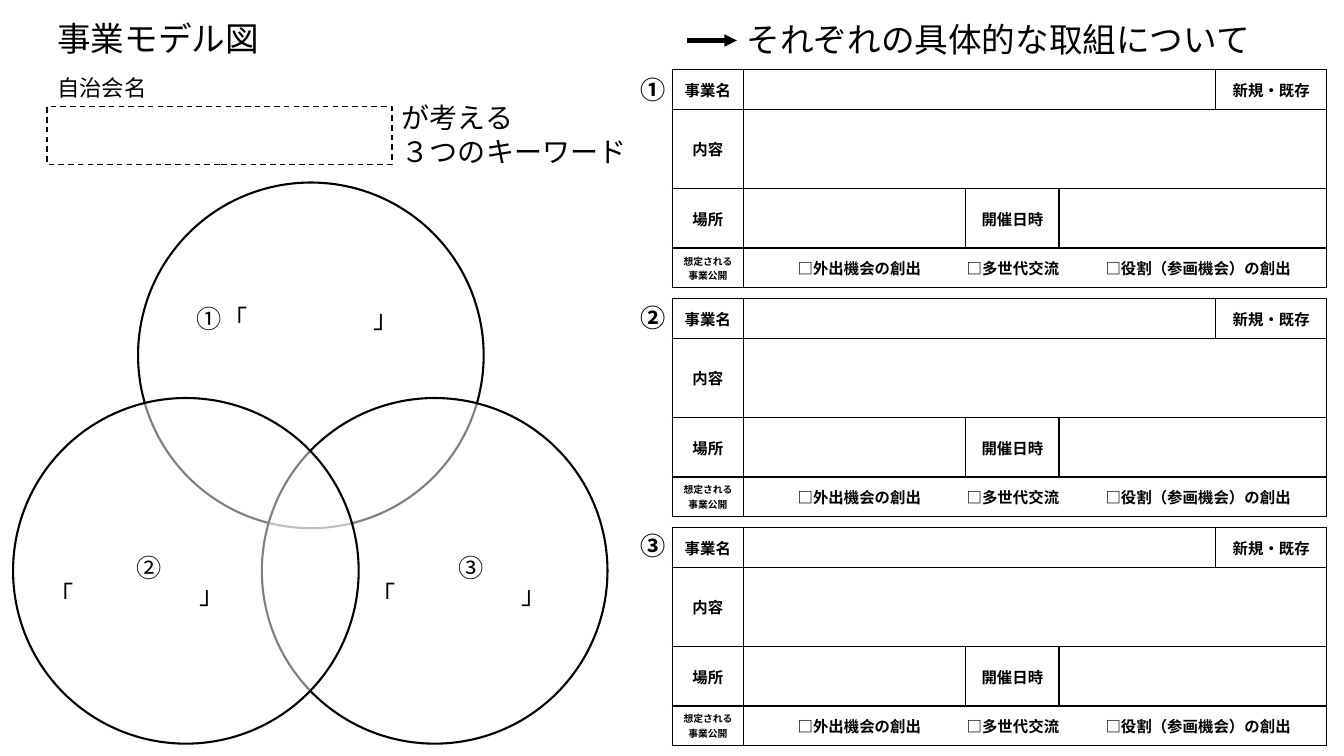
from pptx import Presentation
from pptx import util as u
from pptx.dml.color import RGBColor
from pptx.enum import dml, shapes, text
from pptx.oxml import parse_xml
from pptx.oxml.ns import nsdecls, qn

Cm = u.Cm
NOTO = "Noto Sans CJK JP"
INK, PAPER = "000000", "FFFFFF"
MID, TOP = text.MSO_ANCHOR.MIDDLE, text.MSO_ANCHOR.TOP
LEFT, MIDDLE = text.PP_ALIGN.LEFT, text.PP_ALIGN.CENTER


def color(code):
    return RGBColor.from_string(code)


def write(frame, words, size, name=NOTO, bold=False, align=LEFT):
    """Fill a text frame, one paragraph for each line of words."""
    frame.text = words
    for para in frame.paragraphs:
        para.alignment = align
        for run in para.runs:
            style = {"size": u.Pt(size), "name": name, "bold": bold}
            for key, value in style.items():
                setattr(run.font, key, value)
            run.font.color.rgb = color(INK)
            run.font._element.append(
                parse_xml(f'<a:ea {nsdecls("a")} typeface="{NOTO}"/>'))


prs = Presentation()
prs.slide_width, prs.slide_height = Cm(33.87), Cm(19.05)
slide = prs.slides.add_slide(prs.slide_layouts[5])
items = slide.shapes

# Title
title = items.title
place = {"left": Cm(1.19), "top": Cm(0.33), "width": Cm(5.64), "height": Cm(1.27)}
for key, value in place.items():
    setattr(title, key, value)
frame = title.text_frame
form = {"word_wrap": False, "vertical_anchor": TOP,
        "auto_size": text.MSO_AUTO_SIZE.NONE}
for key, value in form.items():
    setattr(frame, key, value)
write(frame, "事業モデル図", 24)

# Headings and the numbers beside the tables
labels = [
    (1.19, 1.75, 2.8, 0.94, "自治会名", 16, "Arial", False),
    (9.88, 2.41, 6.22, 1.96, "が考える\n３つのキーワード", 20, "Arial", False),
    (18.57, 0.36, 13.34, 1.27, "それぞれの具体的な取組について", 24, "Arial", False),
]
for i, mark in enumerate("①②③"):
    labels.append((15.88, 1.75 + 5.74 * i, 1.14, 1.22, mark, 18, NOTO, True))
for x, y, w, h, words, size, name, bold in labels:
    box = items.add_textbox(Cm(x), Cm(y), Cm(w), Cm(h))
    box.text_frame.word_wrap = False
    write(box.text_frame, words, size, name, bold)

# Dashed field for the association's name
field = items.add_shape(shapes.MSO_SHAPE.RECTANGLE,
                        Cm(1.19), Cm(2.69), Cm(8.69), Cm(1.45))
field.shadow.inherit = False
field.fill.background()
field.line.color.rgb = color(INK)
field.line.width = u.Pt(1)
field.line.dash_style = dml.MSO_LINE.DASH

# Three overlapping keyword circles: circle corner, then text box
size = Cm(8.71)
circles = [
    ("①", 3.48, 4.6, (4.62, 6.12, 6.4, 3.91)),
    ("③", 6.6, 10.03, (9.27, 12.29, 5.23, 4.8)),
    ("②", 0.33, 10.03, (1.14, 12.29, 5.23, 4.8)),
]
for mark, x, y, area in circles:
    ring = items.add_shape(shapes.MSO_SHAPE.OVAL, Cm(x), Cm(y), size, size)
    ring.shadow.inherit = False
    ring.fill.solid()
    ring.fill.fore_color.rgb = color(PAPER)
    tint = ring._element.spPr.find(qn("a:solidFill"))[0]
    tint.append(parse_xml(f'<a:alpha {nsdecls("a")} val="50000"/>'))
    ring.line.color.rgb = color(INK)
    ring.line.width = u.Pt(1.5)

    frame = items.add_textbox(*map(Cm, area)).text_frame
    form = {"word_wrap": True, "vertical_anchor": MID, "margin_left": 0,
            "margin_right": 0, "margin_top": 0, "margin_bottom": 0}
    for key, value in form.items():
        setattr(frame, key, value)
    write(frame, mark + "「　　　　　」　", 18, align=MIDDLE)
    frame.paragraphs[0].line_spacing = 0.9

# Arrow towards the tables
arrow = items.add_connector(shapes.MSO_CONNECTOR.STRAIGHT,
                            Cm(17.32), Cm(1.02), Cm(18.57), Cm(1.02))
arrow.line.color.rgb = color(INK)
arrow.line.width = u.Pt(3)
arrow.line._get_or_add_ln().append(
    parse_xml(f'<a:tailEnd {nsdecls("a")} type="triangle"/>'))
arrow._element.spPr.append(parse_xml(f'<a:effectLst {nsdecls("a")}/>'))

# One form table for each keyword
cols = [1.8, 5.6, 2.35, 3.95, 2.8]
rows = [1, 2, 1.5, 1]
spans = [(0, 1, 3), (1, 1, 4), (2, 3, 4), (3, 1, 4)]
heads = {
    (0, 0): ("事業名", 11), (0, 4): ("新規・既存", 11), (1, 0): ("内容", 11),
    (2, 0): ("場所", 11), (2, 2): ("開催日時", 11),
    (3, 0): ("想定される事業公開", 7),
}
goals = "□外出機会の創出\t□多世代交流\t□役割（参画機会）の創出"
for i in range(3):
    table = items.add_table(len(rows), len(cols), Cm(16.94), Cm(1.75 + 5.77 * i),
                            Cm(sum(cols)), Cm(sum(rows))).table
    table.first_row = table.horz_banding = False
    for col, w in zip(table.columns, cols):
        col.width = Cm(w)
    for row, h in zip(table.rows, rows):
        row.height = Cm(h)
    for cell in table.iter_cells():
        form = {"vertical_anchor": MID, "margin_top": 0, "margin_bottom": 0}
        for key, value in form.items():
            setattr(cell, key, value)
        for side in "LRTB":
            cell._tc.get_or_add_tcPr().append(parse_xml(
                f'<a:ln{side} {nsdecls("a")} w="12700"><a:solidFill>'
                f'<a:srgbClr val="{INK}"/></a:solidFill></a:ln{side}>'))
        cell.fill.background()
    for r, first, last in spans:
        table.cell(r, first).merge(table.cell(r, last))
    for (r, c), (words, pt) in heads.items():
        write(table.cell(r, c).text_frame, words, pt, bold=True, align=MIDDLE)

    choice = table.cell(3, 1)
    choice.margin_left = Cm(1.36)
    write(choice.text_frame, goals, 11, bold=True)
    choice.text_frame.paragraphs[0]._p.get_or_add_pPr().append(parse_xml(
        f'<a:tabLst {nsdecls("a")}><a:tab pos="{Cm(4.26)}" algn="l"/>'
        f'<a:tab pos="{Cm(7.76)}" algn="l"/></a:tabLst>'))

prs.save("out.pptx")
